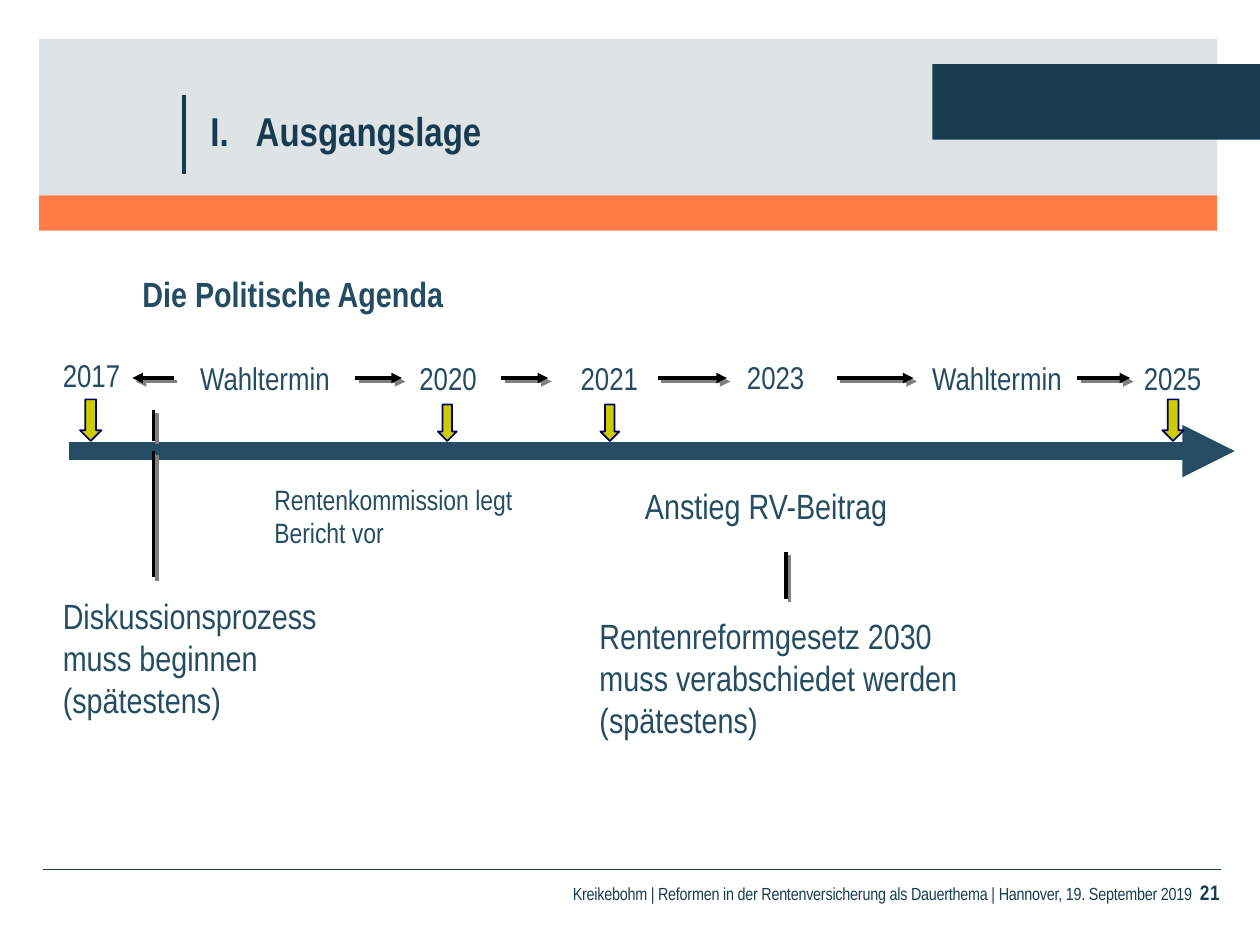
from lxml.etree import SubElement
from pptx import Presentation
from pptx.dml.color import RGBColor
from pptx.enum.shapes import MSO_CONNECTOR, MSO_SHAPE
from pptx.enum.text import PP_ALIGN
from pptx.oxml.ns import qn
from pptx.util import Inches, Pt

NAVY = RGBColor(0x17, 0x3C, 0x51)
BLUE = RGBColor(0x24, 0x4C, 0x62)
GREY = RGBColor(0xDE, 0xE3, 0xE6)
ORANGE = RGBColor(0xFF, 0x7B, 0x46)
YELLOW = RGBColor(0xCC, 0xCC, 0x00)
EDGE = RGBColor(0x00, 0x00, 0x66)
BLACK = RGBColor(0, 0, 0)
FONT = "Arial Narrow"
PAD = (0.1, 0.05)

# The slide is a grid of 10 columns and 7.5 rows, each one inch
COLS, ROWS = 10, 7.5


def shape(slide, kind, x, y, w, h, fill, edge=None):
    item = slide.shapes.add_shape(kind, *map(Inches, (x, y, w, h)))
    item.shadow.inherit = False
    item.fill.solid()
    item.fill.fore_color.rgb = fill
    if edge is None:
        item.line.fill.background()
    else:
        item.line.color.rgb = edge
        item.line.width = Pt(1)


def line(slide, x1, y1, x2, y2, color=BLACK, width=2, head=False, shade=False):
    item = slide.shapes.add_connector(
        MSO_CONNECTOR.STRAIGHT, *map(Inches, (x1, y1, x2, y2)))
    item.line.color.rgb = color
    item.line.width = Pt(width)
    if head:
        SubElement(item.line._get_or_add_ln(), qn("a:tailEnd"), type="triangle")
    effects = SubElement(item._element.spPr, qn("a:effectLst"))
    if shade:
        cast = SubElement(effects, qn("a:outerShdw"), dist=str(Pt(2.8)),
                          dir="2700000", algn="ctr", rotWithShape="0")
        SubElement(cast, qn("a:srgbClr"), val="808080")


def text(slide, x, y, w, h, rows, size, color=BLUE, bold=False, pad=PAD, tab=None):
    frame = slide.shapes.add_textbox(*map(Inches, (x, y, w, h))).text_frame
    frame.word_wrap = True
    frame.margin_left = frame.margin_right = Inches(pad[0])
    frame.margin_top = frame.margin_bottom = Inches(pad[1])
    for i, row in enumerate(rows):
        para = frame.add_paragraph() if i else frame.paragraphs[0]
        para.text = row
        if tab:
            stops = SubElement(para._p.get_or_add_pPr(), qn("a:tabLst"))
            SubElement(stops, qn("a:tab"), pos=str(Inches(tab)), algn="l")
        para.font.name = FONT
        para.font.size = Pt(size)
        para.font.bold = bold
        para.font.color.rgb = color
    return frame.paragraphs[0]


def header(slide, x, y, w, h):
    band = 0.28
    shape(slide, MSO_SHAPE.RECTANGLE, x, y, w, h - band, GREY)
    line(slide, x + 1.15, y + 0.44, x + 1.15, y + 1.07, NAVY, 1.8)
    shape(slide, MSO_SHAPE.RECTANGLE, 7.4, y + 0.2, COLS - 7.4, 0.6, NAVY)
    shape(slide, MSO_SHAPE.RECTANGLE, x, y + h - band, w, band, ORANGE)
    text(slide, x + 1.36, y + 0.53, 5.67, 0.39, ["I.\tAusgangslage"],
         23, NAVY, True, (0, 0), 0.36)


def agenda(slide, x, y, w, h):
    para = text(slide, x, y, w, h, ["Die Politische Agenda"], 20, bold=True, pad=(0, 0))
    para.line_spacing = 1.5


def timeline(slide, x, y, w, h):
    # Axis along the bottom of the box
    line(slide, x + 0.15, y + h, x + w, y + h, BLUE, 10, head=True)

    # Dates and elections
    for dx, dy, wide, word in (
            (0, -0.02, 1.25, "2017"), (1.09, 0, 1.6, "Wahltermin"),
            (2.83, 0, 0.86, "2020"), (4.11, 0, 1, "2021"),
            (5.43, -0.01, 0.97, "2023"), (6.9, 0, 1.54, "Wahltermin"),
            (8.58, 0, 0.83, "2025")):
        text(slide, x + dx, y + dy, wide, 0.4, [word], 18)

    # Arrows between them
    for start, end in ((0.98, 0.65), (2.42, 2.79), (3.58, 3.95),
                       (4.82, 5.37), (6.24, 6.85), (8.15, 8.57)):
        line(slide, x + start, y + 0.2, x + end, y + 0.2, head=True, shade=True)

    # Markers standing on the axis
    for mid, wide, tall in ((0.32, 0.17, 0.33), (3.15, 0.15, 0.29),
                            (4.44, 0.15, 0.29), (8.91, 0.17, 0.33)):
        shape(slide, MSO_SHAPE.DOWN_ARROW, x + mid - wide / 2,
              y + h - 0.08 - tall, wide, tall, YELLOW, EDGE)


def notes(slide, x, y, w, h):
    # Strokes that tie the notes to the axis
    for dx, top, end in ((0.82, -0.33, -0.08), (0.82, 0, 1), (5.84, 0.8, 1.17)):
        line(slide, x + dx, y + top, x + dx, y + end, shade=True)

    for dx, dy, wide, tall, size, rows in (
            (1.68, 0.2, 2.76, 0.64, 16, ["Rentenkommission legt", "Bericht vor"]),
            (4.62, 0.22, 2.76, 0.44, 20, ["Anstieg RV-Beitrag"]),
            (0, 1.09, 3.06, 1.11, 20,
             ["Diskussionsprozess", "muss beginnen", "(spätestens)"]),
            (4.26, 1.25, 4.17, 1.45, 20,
             ["Rentenreformgesetz 2030", "muss verabschiedet werden", "(spätestens)"])):
        text(slide, x + dx, y + dy, wide, tall, rows, size)


def footer(slide, x, y, w, h):
    line(slide, x, y, x + w, y, NAVY, 1)
    para = text(slide, x + 3.74, y + 0.08, w - 3.75, h - 0.08,
                ["Kreikebohm | Reformen in der Rentenversicherung als Dauerthema"
                 " | Hannover, 19. September 2019"], 10, NAVY, pad=(0, 0))
    para.alignment = PP_ALIGN.RIGHT
    para.runs[0]._r.get_or_add_rPr().set("spc", "-10")
    # Page number after a widened space
    for word, gap in ((" ", "230"), ("21", "30")):
        run = para.add_run()
        run.text = word
        run._r.get_or_add_rPr().set("spc", gap)
    run.font.size = Pt(12)
    run.font.bold = True


def main():
    deck = Presentation()
    deck.slide_width, deck.slide_height = Inches(COLS), Inches(ROWS)
    slide = deck.slides.add_slide(deck.slide_layouts[6])
    header(slide, 0.31, 0.31, 9.35, 1.52)
    agenda(slide, 1.13, 2, 8.11, 0.44)
    timeline(slide, 0.4, 2.8, 9.4, 0.78)
    notes(slide, 0.4, 3.58, 8.43, 2.7)
    footer(slide, 0.34, 6.9, 9.35, 0.28)
    deck.save("out.pptx")


if __name__ == "__main__":
    main()
